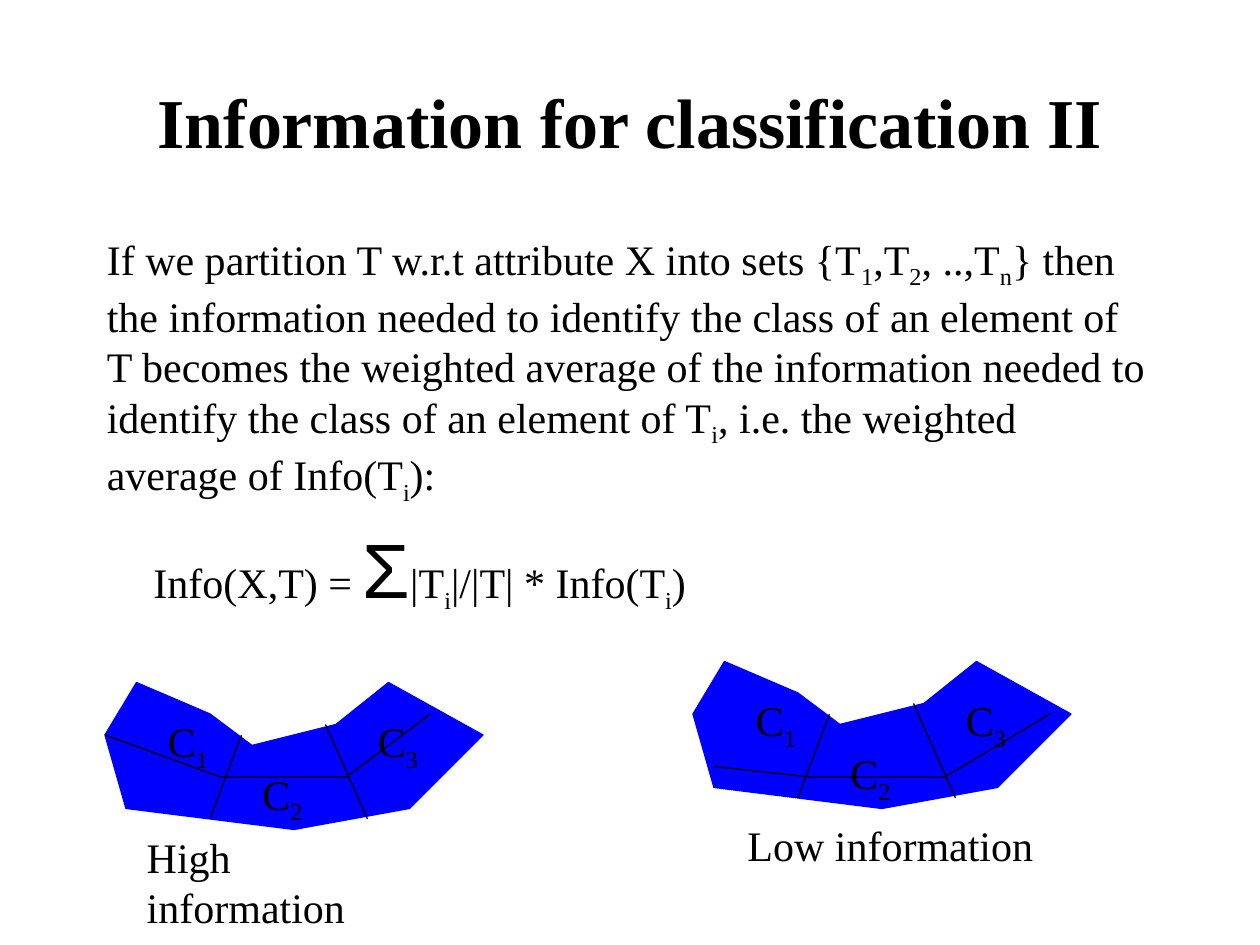
from lxml.etree import SubElement
from pptx import Presentation
from pptx.dml.color import RGBColor
from pptx.enum.shapes import MSO_CONNECTOR as Connector
from pptx.enum.text import MSO_ANCHOR as Anchor, MSO_AUTO_SIZE as AutoSize, PP_ALIGN as Align
from pptx.oxml.ns import qn
from pptx.util import Inches, Pt

COLUMNS = 120
REGION = [(10, 3), (3, 0), (0, 5), (2, 12), (18, 14), (29, 12), (36, 5), (27, 0), (22, 4), (14, 6)]
DIVIDERS = [((13, 5), (10, 13)), ((21, 4), (25, 13))]
LABELS = [("C_1", 4.8, 2.6), ("C_2", 13.8, 7.6), ("C_3", 24.8, 2.6)]
FIGURES = [
    ((10, 65), [(0, 5), (11, 9), (23, 9), (31, 3)], "High information", (2.8, 13.6), 30.2),
    ((66, 63), [(2, 10), (11, 11), (24, 11), (34, 5)], "Low information", (4, 14.5), 29.6),
]
INTRO = (
    "If we partition T w.r.t attribute X into sets {T_1,T_2, ..,T_n} then the information "
    "needed to identify the class of an element of T becomes the weighted average of the "
    "information needed to identify the class of an element of T_i, i.e. the weighted "
    "average of Info(T_i):"
)


def color(value):
    """Turn a hex string into a colour."""
    return RGBColor.from_string(value)


class Page:
    """Draw on one slide, with lengths in cells of its grid."""

    ink, accent = "000000", "0000FF"
    face, symbol_face = "Times New Roman", "Arial"
    size, title_size, symbol_size = 24, 40, 44

    def __init__(self, deck):
        """Add a blank slide and measure its grid cell."""
        self.shapes = deck.slides.add_slide(deck.slide_layouts[6]).shapes
        self.cell = deck.slide_width // COLUMNS

    def lengths(self, *cells):
        """Convert grid cells to slide lengths."""
        return [round(cell * self.cell) for cell in cells]

    def box(self, left, top, width, height, wrap=True):
        """Add an empty text box and return its frame."""
        frame = self.shapes.add_textbox(*self.lengths(left, top, width, height)).text_frame
        frame.word_wrap = wrap
        frame.auto_size = AutoSize.NONE if wrap else AutoSize.SHAPE_TO_FIT_TEXT
        return frame

    def style(self, para, size=None, bold=False):
        """Set the font of a whole paragraph."""
        font = para.font
        font.name, font.size, font.bold = self.face, Pt(size or self.size), bold
        font.color.rgb = color(self.ink)

    def add_spans(self, para, text):
        """Add text in which an underscore lowers the next character."""
        first, *pieces = text.split("_")
        para.add_run().text = first
        for piece in pieces:
            span = para.add_run()
            span.text = piece[0]
            span._r.get_or_add_rPr().set("baseline", "-25000")
            if piece[1:]:
                para.add_run().text = piece[1:]

    def title(self, text):
        """Add the centred heading."""
        frame = self.box(9, 4, 102, 15)
        frame.vertical_anchor = Anchor.MIDDLE
        para = frame.paragraphs[0]
        para.alignment = Align.CENTER
        self.style(para, self.title_size, bold=True)
        self.add_spans(para, text)

    def body(self, intro, before, symbol, after):
        """Add the explanation and the indented formula."""
        frame = self.box(9, 21, 102, 54)
        frame.margin_top = Inches(0.1)
        para = frame.paragraphs[0]
        self.style(para)
        self.add_spans(para, intro)
        formula = frame.add_paragraph()
        formula.space_before = Pt(9)
        properties = formula._p.get_or_add_pPr()
        properties.set("marL", str(Inches(0.62)))
        properties.set("indent", str(Inches(-0.25)))
        self.style(formula)
        self.add_spans(formula, before)
        span = formula.add_run()
        span.text = symbol
        span.font.name, span.font.size = self.symbol_face, Pt(self.symbol_size)
        self.add_spans(formula, after)

    def label(self, text, left, top, width=6.4):
        """Add a one-line label."""
        para = self.box(left, top, width, 6, wrap=False).paragraphs[0]
        self.style(para)
        self.add_spans(para, text)

    def outline(self, origin, points, closed):
        """Add a filled region or an open border line."""
        builder = self.shapes.build_freeform(*points[0], scale=self.cell)
        builder.add_line_segments(points[1:], close=closed)
        shape = builder.convert_to_shape(*self.lengths(*origin))
        shape.shadow.inherit = False
        shape.line.width = Pt(0.75)
        shape.line.color.rgb = color(self.accent if closed else self.ink)
        if closed:
            shape.fill.solid()
            shape.fill.fore_color.rgb = color(self.accent)
        else:
            shape.fill.background()

    def line(self, start, end):
        """Add a straight thin line."""
        line = self.shapes.add_connector(Connector.STRAIGHT, *self.lengths(*start, *end))
        line.line.width = Pt(0.75)
        line.line.color.rgb = color(self.ink)
        SubElement(line._element.spPr, qn("a:effectLst"))

    def figure(self, origin, border, caption, place, width):
        """Add a region split into classes, with its caption."""
        def shift(point):
            """Move a point of the figure to its place on the slide."""
            return point[0] + origin[0], point[1] + origin[1]

        self.outline(origin, REGION, closed=True)
        for text, left, top in LABELS:
            self.label(text, *shift((left, top)))
        for start, end in DIVIDERS:
            self.line(shift(start), shift(end))
        self.outline(origin, border, closed=False)
        self.label(caption, *shift(place), width)


def main():
    """Build and save the deck."""
    deck = Presentation()
    deck.slide_width, deck.slide_height = Inches(10), Inches(7.5)
    page = Page(deck)
    page.title("Information for classification II")
    page.body(INTRO, "Info(X,T) = ", "Σ", "|T_i|/|T| * Info(T_i)")
    for figure in FIGURES:
        page.figure(*figure)
    deck.save("out.pptx")


if __name__ == "__main__":
    main()
